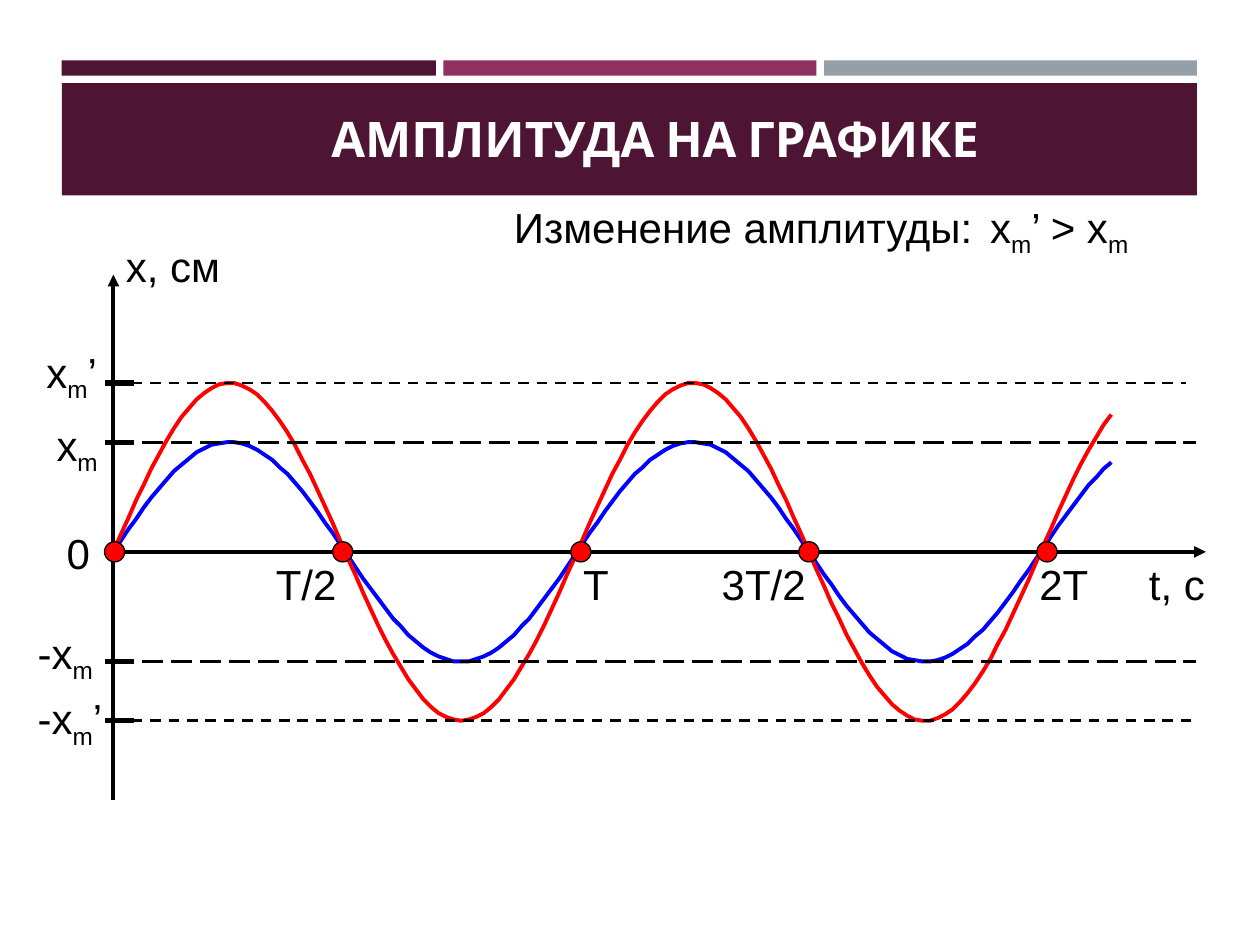
"""Builds a slide on the amplitude of oscillations, shown as two sine curves over time."""
from math import pi, sin

from lxml.etree import SubElement
from pptx import Presentation
from pptx.dml.color import RGBColor
from pptx.enum.dml import MSO_LINE
from pptx.enum.shapes import MSO_CONNECTOR, MSO_SHAPE
from pptx.enum.text import MSO_ANCHOR, PP_ALIGN
from pptx.oxml.ns import qn
from pptx.util import Pt

PX = 9144
AXIS_X, AXIS_Y = 90, 438
PERIOD, CURVE_END, CURVE_STEP = 368, 884, 6
SMALL_AMPLITUDE, LARGE_AMPLITUDE = 87, 134
DOT_SIZE = 16
BLACK, WHITE, RED, BLUE = "000000", "FFFFFF", "FF0000", "0000FF"
PLUM, MAGENTA, GRAY = "4D1434", "903163", "969FA7"


def paint(fill, color):
    """Give a fill a solid colour."""
    fill.solid()
    fill.fore_color.rgb = RGBColor.from_string(color)


def add_line(start_x, start_y, end_x, end_y, width, dash=None, arrow=False):
    """Draw a black straight line without a shadow."""
    line = slide.shapes.add_connector(
        MSO_CONNECTOR.STRAIGHT, *(value * PX for value in (start_x, start_y, end_x, end_y)))
    paint(line.line.fill, BLACK)
    line.line.width = Pt(width)
    if dash:
        line.line.dash_style = dash
    if arrow:
        SubElement(line.line._get_or_add_ln(), qn("a:tailEnd"), type="triangle")
    SubElement(line._element.spPr, qn("a:effectLst"))


presentation = Presentation()
presentation.slide_width, presentation.slide_height = 1000 * PX, 750 * PX
slide = presentation.slides.add_slide(presentation.slide_layouts[6])

title_bars = [
    (49, 48, 297, 12, PLUM),
    (352, 48, 296, 12, MAGENTA),
    (654, 48, 296, 12, GRAY),
    (49, 66, 901, 138, PLUM),
]
graph_area = (20, 155, 961, 528, WHITE)
for *box, color in [*title_bars, graph_area]:
    shape = slide.shapes.add_shape(MSO_SHAPE.RECTANGLE, *(value * PX for value in box))
    shape.shadow.inherit = False
    paint(shape.fill, color)
    shape.line.fill.background()

add_line(AXIS_X, 635, AXIS_X, 218, 2.25, arrow=True)
add_line(AXIS_X, AXIS_Y, 957, AXIS_Y, 2.25, arrow=True)
levels = [
    (AXIS_Y - LARGE_AMPLITUDE, 941, MSO_LINE.DASH),
    (AXIS_Y - SMALL_AMPLITUDE, 949, MSO_LINE.LONG_DASH),
    (AXIS_Y + SMALL_AMPLITUDE, 949, MSO_LINE.LONG_DASH),
    (AXIS_Y + LARGE_AMPLITUDE, 949, MSO_LINE.DASH),
]
for level_y, level_end, dash in levels:
    add_line(83, level_y, 106, level_y, 3)

title_format = {"name": "Cabin", "size": Pt(28), "bold": True}
label_format = {"name": "Arial", "size": Pt(24), "bold": False}
title = (70, 44, 900, 94, "АМПЛИТУДА НА ГРАФИКЕ")
labels = [
    (398, 155, 472, 50, "Изменение амплитуды:"),
    (776, 155, 158, 50, "x|m|’ > x|m"),
    (90, 186, 120, 50, "x, см"),
    (27, 270, 71, 50, "x|m|’"),
    (35, 328, 55, 50, "x|m"),
    (43, 414, 39, 50, "0"),
    (20, 493, 79, 50, "-x|m"),
    (20, 545, 87, 50, "-x|m|’"),
    (209, 438, 71, 50, "Т/2"),
    (453, 438, 55, 50, "Т"),
    (563, 438, 94, 50, "3Т/2"),
    (815, 438, 63, 50, "2Т"),
    (902, 438, 75, 50, "t, с"),
]
for *box, text in [title, *labels]:
    is_title = text == title[-1]
    text_frame = slide.shapes.add_textbox(*(value * PX for value in box)).text_frame
    text_frame.word_wrap = True
    text_frame.vertical_anchor = MSO_ANCHOR.BOTTOM if is_title else MSO_ANCHOR.TOP
    paragraph = text_frame.paragraphs[0]
    paragraph.alignment = PP_ALIGN.CENTER if is_title else PP_ALIGN.LEFT
    for index, piece in enumerate(text.split("|")):
        run = paragraph.add_run()
        run.text = piece
        for name, value in (title_format if is_title else label_format).items():
            setattr(run.font, name, value)
        paint(run.font.fill, WHITE if is_title else BLACK)
        is_subscript = index % 2 == 1
        if is_subscript:
            run.font._element.set("baseline", "-25000")

for color, amplitude in ((BLUE, SMALL_AMPLITUDE), (RED, LARGE_AMPLITUDE)):
    points = [
        (x, round(AXIS_Y - amplitude * sin(2 * pi * (x - AXIS_X) / PERIOD)))
        for x in range(AXIS_X, CURVE_END + 1, CURVE_STEP)
    ]
    builder = slide.shapes.build_freeform(*points[0], scale=PX)
    builder.add_line_segments(points[1:], close=False)
    curve = builder.convert_to_shape()
    curve.shadow.inherit = False
    curve.fill.background()
    paint(curve.line.fill, color)
    curve.line.width = Pt(2.25)

for level_y, level_end, dash in levels:
    add_line(AXIS_X, level_y, level_end, level_y, 1.5, dash)

for dot_left in (83, 264, 453, 634, 823):
    dot = slide.shapes.add_shape(
        MSO_SHAPE.OVAL, dot_left * PX, (AXIS_Y - DOT_SIZE // 2) * PX,
        DOT_SIZE * PX, DOT_SIZE * PX)
    dot.shadow.inherit = False
    paint(dot.fill, RED)
    paint(dot.line.fill, BLACK)
    dot.line.width = Pt(0.75)

presentation.save("out.pptx")
